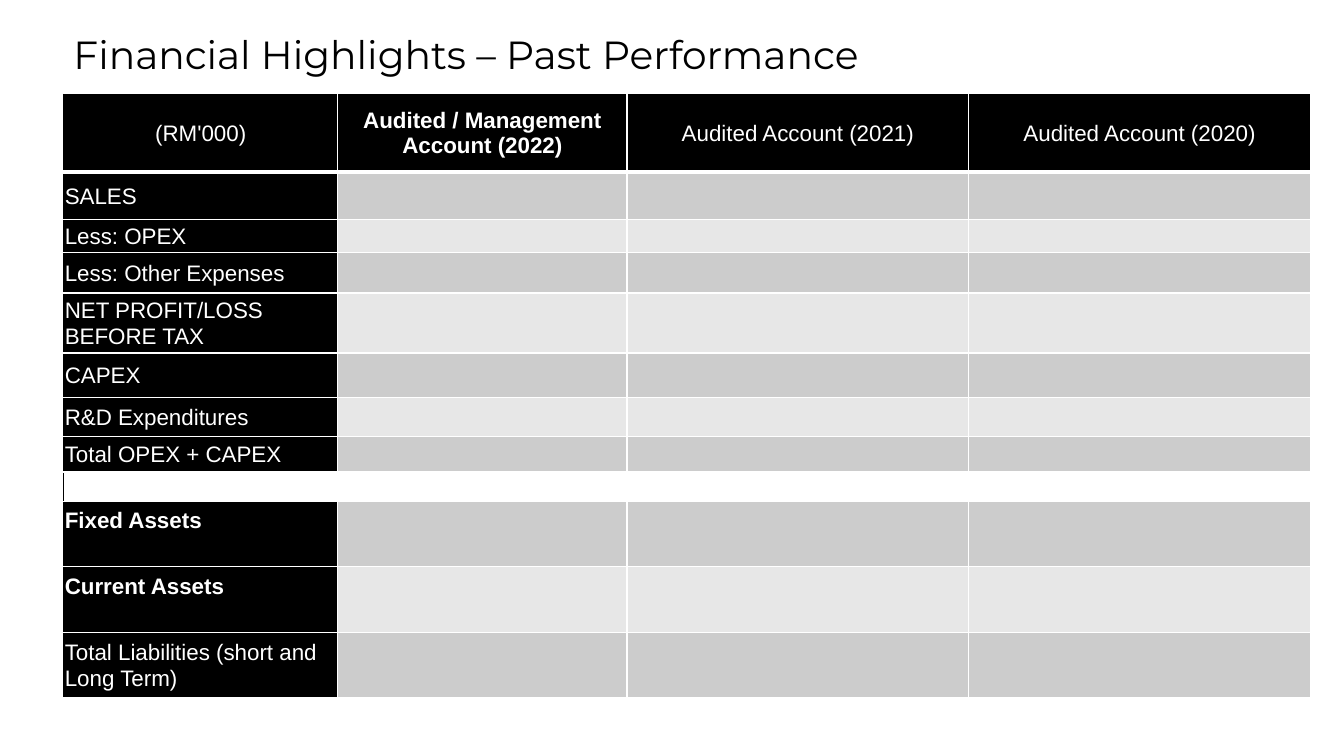
from pptx import Presentation
from pptx.dml.color import RGBColor
from pptx.enum.text import MSO_ANCHOR, MSO_AUTO_SIZE, PP_ALIGN
from pptx.oxml.ns import qn
from pptx.util import Pt
from lxml.etree import SubElement, Element

BLACK = RGBColor(0x00, 0x00, 0x00)
WHITE = RGBColor(0xFF, 0xFF, 0xFF)
DARK = RGBColor(0xCC, 0xCC, 0xCC)
LIGHT = RGBColor(0xE7, 0xE7, 0xE7)

HEADS = ["(RM'000)", "Audited / Management Account (2022)",
         "Audited Account (2021)", "Audited Account (2020)"]
WIDTHS = [195.9, 206.6, 244.1, 244.1]
HEAD_H = 55.5
GAP = ""  # the label of the merged row between the two blocks
ROWS = [("SALES", 33.8), ("Less: OPEX", 23.8), ("Less: Other Expenses", 28.8),
        ("NET PROFIT/LOSS BEFORE TAX", 42), ("CAPEX", 31.7),
        ("R&D Expenditures", 28.1), ("Total OPEX + CAPEX", 25.2), (GAP, 20.8),
        ("Fixed Assets", 46.8), ("Current Assets", 46.8),
        ("Total Liabilities (short and Long Term)", 46.8)]
BOLD = {HEADS[1], "Fixed Assets", "Current Assets"}
RAISED = {"Fixed Assets", "Current Assets"}


class Deck:
    title_font, body_font = "Montserrat", "Arial"
    title_size, body_size = 28, 16
    inset = 0.9

    def __init__(self):
        self.prs = Presentation()
        self.prs.slide_width, self.prs.slide_height = Pt(960), Pt(540)
        self.slide = self.prs.slides.add_slide(self.prs.slide_layouts[6])

    def style(self, font, name, size, color, bold=False):
        font.name, font.size, font.bold = name, Pt(size), bold
        font.color.rgb = color

    def title(self, text, x, y, w, h):
        frame = self.slide.shapes.add_textbox(Pt(x), Pt(y), Pt(w), Pt(h)).text_frame
        frame.word_wrap = True
        frame.auto_size = MSO_AUTO_SIZE.SHAPE_TO_FIT_TEXT
        frame.text = text
        self.style(frame.paragraphs[0].runs[0].font, self.title_font,
                   self.title_size, BLACK)

    def table(self, x, y, widths, heights):
        frame = self.slide.shapes.add_table(len(heights), len(widths), Pt(x), Pt(y),
                                            Pt(sum(widths)), Pt(sum(heights)))
        grid = frame.table
        for col, width in zip(grid.columns, widths):
            col.width = Pt(width)
        for row, height in zip(grid.rows, heights):
            row.height = Pt(height)
        return grid

    def cell(self, cell, fill, text="", left=WHITE, top=WHITE, base=1):
        cell.fill.solid()
        cell.fill.fore_color.rgb = fill
        cell.vertical_anchor = MSO_ANCHOR.MIDDLE
        cell.margin_left = cell.margin_right = Pt(self.inset)
        cell.margin_top = cell.margin_bottom = Pt(self.inset)
        self.edges(cell, (("L", left, 1), ("R", WHITE, 1),
                          ("T", top, 1), ("B", WHITE, base)))
        para = cell.text_frame.paragraphs[0]
        if text:
            para.text = text
            self.style(para.runs[0].font, self.body_font, self.body_size,
                       WHITE, text in BOLD)
        else:
            # Small end mark, so that an empty cell keeps its row height
            SubElement(para._p, qn("a:endParaRPr"), sz="1000")
        return para

    def edges(self, cell, sides):
        props = cell._tc.get_or_add_tcPr()
        for spot, (side, color, width) in enumerate(sides):
            line = Element(qn("a:ln" + side), w=str(Pt(width)))
            fill = SubElement(line, qn("a:solidFill"))
            SubElement(fill, qn("a:srgbClr"), val=str(color))
            props.insert(spot, line)


def main():
    deck = Deck()
    deck.title("Financial Highlights – Past Performance", 45.4, 18, 735, 41)
    grid = deck.table(45.4, 67.5, WIDTHS, [HEAD_H] + [h for _, h in ROWS])

    # Header row
    for col, head in enumerate(HEADS):
        para = deck.cell(grid.cell(0, col), BLACK, head,
                         left=WHITE if col else BLACK, top=BLACK, base=3)
        para.alignment = PP_ALIGN.CENTER
        if col == 0:
            para.line_spacing = 1.07
            para.space_before, para.space_after = Pt(6), Pt(3)

    # Label column and banded empty cells
    for row, (label, _) in enumerate(ROWS, 1):
        first = grid.cell(row, 0)
        if label == GAP:
            first.merge(grid.cell(row, len(HEADS) - 1))
            deck.cell(first, WHITE, left=BLACK)
            continue
        para = deck.cell(first, BLACK, label, left=BLACK)
        para.line_spacing = 1.07
        if label in RAISED:
            first.vertical_anchor = MSO_ANCHOR.TOP
            first.margin_top = Pt(4)
        for col in range(1, len(HEADS)):
            deck.cell(grid.cell(row, col), DARK if row % 2 else LIGHT)

    deck.prs.save("out.pptx")


if __name__ == "__main__":
    main()
